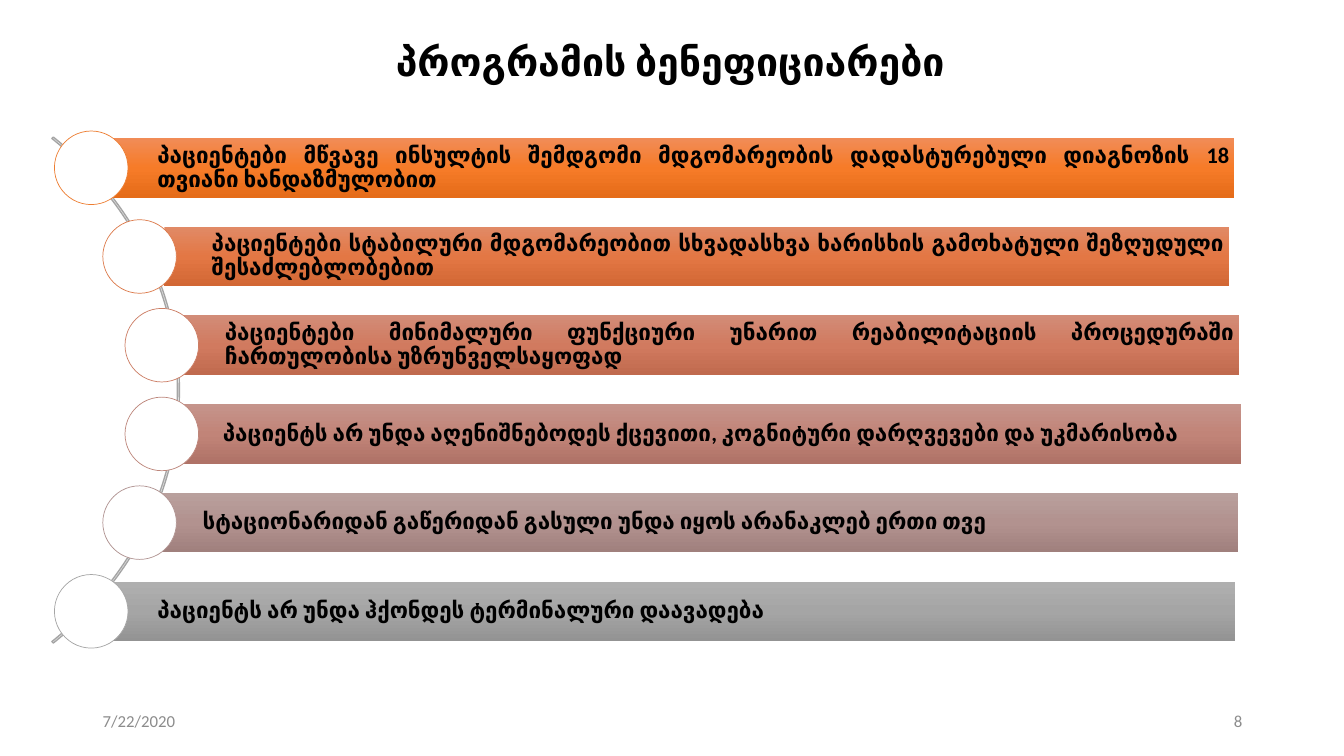
"""Build the slide that lists the programme beneficiaries."""
from copy import deepcopy

from pptx import Presentation
from pptx import util as u
from pptx.dml.color import RGBColor
from pptx.enum import shapes, text

PX = 9144
BLACK = RGBColor(0x00, 0x00, 0x00)
WHITE = RGBColor(0xFF, 0xFF, 0xFF)
GREY = RGBColor(0xA5, 0xA5, 0xA5)
MUTED = RGBColor(0x8C, 0x8C, 0x8C)
KIND = shapes.MSO_SHAPE
ALIGN = text.PP_ALIGN

ROWS = [
    ("პაციენტები მწვავე ინსულტის შემდგომი მდგომარეობის დადასტურებული დიაგნოზის 18 თვიანი ხანდაზმულობით",
     109, 1115, 54, "F18C57 F67B28 E56C19 ED7D31"),
    ("პაციენტები სტაბილური მდგომარეობით სხვადასხვა ხარისხის გამოხატული შეზღუდული შესაძლებლობებით",
     163, 1056, 102, "E18A66 E37744 D26734 DC7A4B"),
    ("პაციენტები მინიმალური ფუნქციური უნარით რეაბილიტაციის პროცედურაში ჩართულობისა უზრუნველსაყოფად",
     176, 1053, 124, "D28C78 D17A5F C06A4E CC7D64"),
    ("პაციენტს არ უნდა აღენიშნებოდეს ქცევითი, კოგნიტური დარღვევები და უკმარისობა",
     174, 1057, 124, "C5948B C18478 AF7267 BD867B"),
    ("სტაციონარიდან გაწერიდან გასული უნდა იყოს არანაკლებ ერთი თვე",
     154, 1074, 102, "B9A09D B2928F A0807D B09391"),
    ("პაციენტს არ უნდა ჰქონდეს ტერმინალური დაავადება",
     109, 1116, 54, "AFAFAF A5A5A5 939393 A5A5A5"),
]
FOOT = [("7/22/2020", 92, ALIGN.LEFT), ("8", 942, ALIGN.RIGHT)]


def draw(kind, *box):
    """Add a flat shape in a px box."""
    shape = slide.shapes.add_shape(kind, *[n * PX for n in box])
    shape.shadow.inherit = False
    return shape


def write(shape, words, size, color, bold, align, space=1.0):
    """Put one formatted paragraph in a shape."""
    frame = shape.text_frame
    frame.word_wrap = True
    frame.auto_size = text.MSO_AUTO_SIZE.NONE
    frame.vertical_anchor = text.MSO_ANCHOR.MIDDLE
    para = frame.paragraphs[0]
    para.alignment, para.line_spacing = align, space
    run = para.add_run()
    run.text = words
    form = {"name": "Calibri", "size": u.Pt(size), "bold": bold}
    for key, value in form.items():
        setattr(run.font, key, value)
    run.font.color.rgb = color


deck = Presentation()
deck.slide_width, deck.slide_height = 1333 * PX, 750 * PX
slide = deck.slides.add_slide(deck.slide_layouts[5])

title = slide.shapes.title
place = {"left": 190, "top": 31, "width": 949, "height": 64}
for key, value in place.items():
    setattr(title, key, value * PX)
write(title, "პროგრამის ბენეფიციარები", 28, BLACK, True, ALIGN.CENTER, 0.9)

arc = draw(KIND.BLOCK_ARC, -574, 50, 752, 674)
for i, value in enumerate((189, 27, 0.003)):
    arc.adjustments[i] = value
arc.fill.background()
arc.line.color.rgb = GREY
arc.line.width = u.Pt(1)

for i, (words, left, width, dot, tints) in enumerate(ROWS):
    top = 137 + 88 * i
    *shades, edge = [RGBColor.from_string(tint) for tint in tints.split()]

    bar = draw(KIND.RECTANGLE, left, top, width, 59)
    bar.line.fill.background()
    bar.fill.gradient()
    bar.fill.gradient_angle = 270
    start = bar.fill.gradient_stops[0]._gs
    start.addnext(deepcopy(start))
    for stop, shade, pos in zip(bar.fill.gradient_stops, shades, (0, 0.5, 1)):
        stop.color.rgb = shade
        stop.position = pos
    pad = {"margin_left": 47, "margin_right": 4, "margin_top": 4, "margin_bottom": 4}
    for key, value in pad.items():
        setattr(bar.text_frame, key, value * PX)
    write(bar, words, 16, BLACK, True, ALIGN.JUSTIFY, 0.9)

    ring = draw(KIND.OVAL, dot, top - 7, 73, 73)
    ring.fill.solid()
    ring.fill.fore_color.rgb = WHITE
    ring.line.color.rgb = edge
    ring.line.width = u.Pt(0.5)

for words, left, align in FOOT:
    box = slide.shapes.add_textbox(*[n * PX for n in (left, 695, 300, 40)])
    write(box, words, 12, MUTED, False, align)

deck.save("out.pptx")
